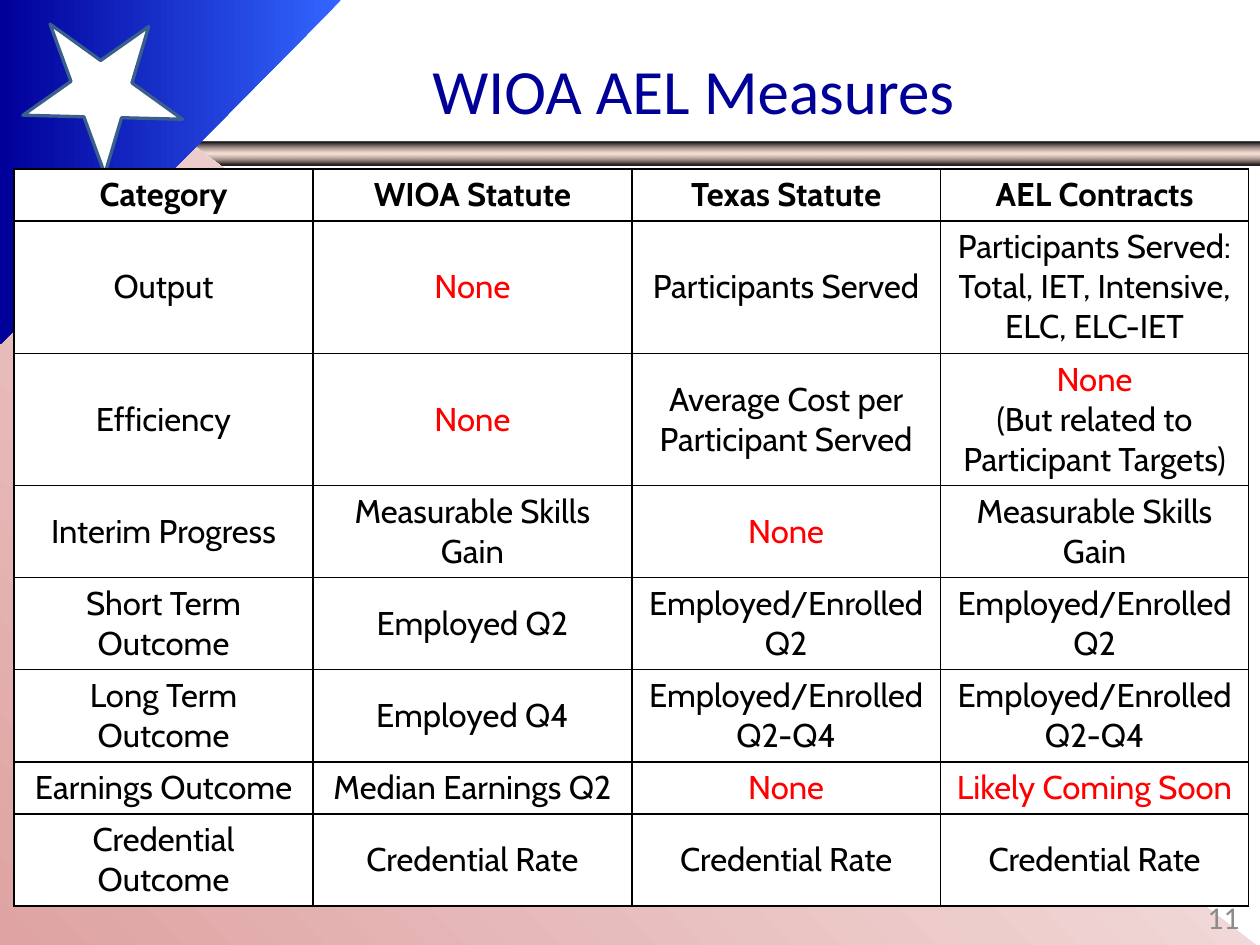
from lxml import etree
from pptx import Presentation, util as u
from pptx.dml.color import RGBColor
from pptx.enum import shapes, text
from pptx.oxml import ns

Pt = u.Pt
COLORS = {
    "white": "FFFFFF", "black": "000000", "navy": "000099", "blue": "3366FF",
    "rose": "DEA3A2", "peach": "EFC1AF", "outline": "3A5F8C", "red": "FF0000", "gray": "8C8C8C",
}
WIDTH, HEIGHT = 768, 576
COLUMN_WIDTHS = [182.2, 194.4, 188, 188]
ROW_HEIGHTS = [31.7, 80.6, 80.6, 56.2, 56.2, 56.2, 31.7, 56.2]
MEASURES = [
    ["Category", "WIOA Statute", "Texas Statute", "AEL Contracts"],
    ["Output", "None", "Participants Served",
     "Participants Served:\nTotal, IET, Intensive, ELC, ELC-IET"],
    ["Efficiency", "None", "Average Cost per Participant Served",
     "None\n(But related to Participant Targets)"],
    ["Interim Progress", "Measurable Skills Gain", "None", "Measurable Skills Gain"],
    ["Short Term Outcome", "Employed Q2", "Employed/Enrolled Q2", "Employed/Enrolled Q2"],
    ["Long Term Outcome", "Employed Q4", "Employed/Enrolled Q2-Q4", "Employed/Enrolled Q2-Q4"],
    ["Earnings Outcome", "Median Earnings Q2", "None", "Likely Coming Soon"],
    ["Credential Outcome"] + ["Credential Rate"] * 3,
]
MISSING = {"None", "Likely Coming Soon"}


def rgb(name):
    """Return the named colour."""
    return RGBColor.from_string(COLORS[name])


def add_element(parent, tag, **attributes):
    """Append a drawing element to its parent."""
    return etree.SubElement(parent, ns.qn(tag), attributes)


def paint_gradient(shape, angle, stops):
    """Fill a shape with (position, colour, opacity) stops, without outline."""
    shape.shadow.inherit = False
    shape.line.fill.background()
    shape.fill.gradient()
    shape.fill.gradient_angle = angle
    stop_list = shape.element.spPr.find(".//" + ns.qn("a:gsLst"))
    for stop in list(stop_list):
        stop_list.remove(stop)
    for position, color, opacity in stops:
        stop = add_element(stop_list, "a:gs", pos=str(position * 1000))
        value = add_element(stop, "a:srgbClr", val=COLORS[color])
        if opacity < 100:
            add_element(value, "a:alpha", val=str(opacity * 1000))


def add_bar(slide):
    """Add the metallic bar below the title."""
    bar = slide.shapes.add_shape(
        shapes.MSO_SHAPE.RECTANGLE, 0, Pt(86.4), Pt(WIDTH), Pt(14.4))
    paint_gradient(bar, 270, [(0, "black", 100), (50, "peach", 47), (100, "black", 100)])


def add_triangle(slide, points, angle, start_color, end_color):
    """Add a corner triangle with a two-colour gradient."""
    builder = slide.shapes.build_freeform(*points[0], scale=Pt(1))
    builder.add_line_segments(points[1:], close=True)
    paint_gradient(builder.convert_to_shape(), angle,
                   [(0, start_color, 100), (100, end_color, 100)])


def add_star(slide):
    """Add the tilted white star."""
    star = slide.shapes.add_shape(
        shapes.MSO_SHAPE.STAR_5_POINT, Pt(15.1), Pt(7.9), Pt(99.4), Pt(88.6))
    star.rotation = 35.7
    star.shadow.inherit = False
    star.fill.solid()
    star.fill.fore_color.rgb = rgb("white")
    star.line.color.rgb = rgb("outline")
    star.line.width = Pt(2)


def add_run(paragraph, words, size, font, color, bold=False):
    """Add one formatted run to a paragraph."""
    run = paragraph.add_run()
    run.text = words
    run.font.size = Pt(size)
    run.font.name = font
    run.font.bold = bold
    run.font.color.rgb = rgb(color)


def add_label(slide, box, words, size, color, alignment):
    """Add a vertically centred line of text."""
    frame = slide.shapes.add_textbox(*map(Pt, box)).text_frame
    frame.word_wrap = True
    frame.vertical_anchor = text.MSO_ANCHOR.MIDDLE
    paragraph = frame.paragraphs[0]
    paragraph.alignment = alignment
    add_run(paragraph, words, size, "Calibri", color)


def add_borders(cell):
    """Draw thin black borders round a cell."""
    properties = cell._tc.get_or_add_tcPr()
    for side in ("L", "R", "T", "B"):
        line = add_element(properties, "a:ln" + side, w=str(Pt(1)))
        add_element(add_element(line, "a:solidFill"), "a:srgbClr", val=COLORS["black"])


def fill_cell(cell, words, header):
    """Format one table cell and write its paragraphs."""
    add_borders(cell)
    cell.fill.solid()
    cell.fill.fore_color.rgb = rgb("white")
    cell.vertical_anchor = text.MSO_ANCHOR.TOP if header else text.MSO_ANCHOR.MIDDLE
    for index, line in enumerate(words.split("\n")):
        frame = cell.text_frame
        paragraph = frame.add_paragraph() if index else frame.paragraphs[0]
        paragraph.alignment = text.PP_ALIGN.CENTER
        add_run(paragraph, line, 20, "Cabin", "red" if line in MISSING else "black", header)


def add_measures(slide):
    """Add the table of measures."""
    table = slide.shapes.add_table(
        len(MEASURES), len(COLUMN_WIDTHS), Pt(8.6), Pt(103),
        Pt(sum(COLUMN_WIDTHS)), Pt(sum(ROW_HEIGHTS))).table
    table.first_row = table.horz_banding = False
    for column, width in zip(table.columns, COLUMN_WIDTHS):
        column.width = Pt(width)
    for index, (row, height) in enumerate(zip(table.rows, ROW_HEIGHTS)):
        row.height = Pt(height)
        for cell, words in zip(row.cells, MEASURES[index]):
            fill_cell(cell, words, index == 0)


def main():
    """Build and save the slide."""
    presentation = Presentation()
    presentation.slide_width, presentation.slide_height = Pt(WIDTH), Pt(HEIGHT)
    slide = presentation.slides.add_slide(presentation.slide_layouts[6])
    add_bar(slide)
    add_triangle(slide, [(0, 0), (677.5, 509), (WIDTH, 578), (0, 578)], 225, "white", "rose")
    add_triangle(slide, [(0, 0), (208, 0), (0, 210)], 180, "blue", "navy")
    add_star(slide)
    add_label(slide, (83.5, 22.3, 678.2, 64.1), "WIOA AEL Measures", 38.4, "navy",
              text.PP_ALIGN.CENTER)
    add_label(slide, (583.2, 543.6, 179.3, 31), "11", 19.3, "gray", text.PP_ALIGN.RIGHT)
    add_measures(slide)
    presentation.save("out.pptx")


if __name__ == "__main__":
    main()
